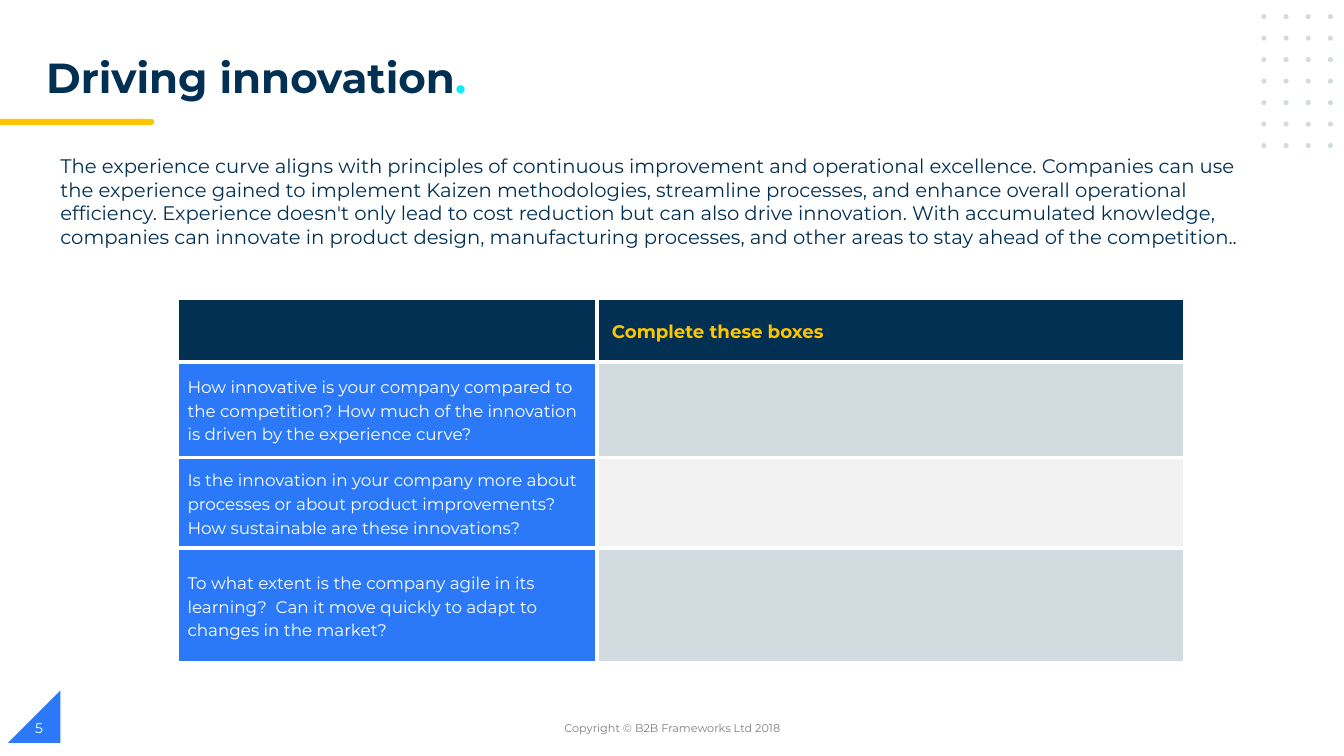
from lxml import etree
from pptx import Presentation
from pptx.dml.color import RGBColor as RGB
from pptx.enum.shapes import MSO_SHAPE as SHAPE
from pptx.enum.text import MSO_ANCHOR as ANCHOR, PP_ALIGN as ALIGN
from pptx.oxml.ns import qn
from pptx.util import Inches, Pt

FONT = "Montserrat"
COLORS = {
    "navy": "023053", "blue": "2B79F8", "gold": "FFC600", "cyan": "0EECEC",
    "mist": "D1DBE0", "pale": "F2F2F2", "gray": "7F7F7F", "white": "FFFFFF",
}
INTRO = (
    "The experience curve aligns with principles of continuous improvement "
    "and operational excellence. Companies can use the experience gained to "
    "implement Kaizen methodologies, streamline processes, and enhance overall "
    "operational efficiency. Experience doesn't only lead to cost reduction but "
    "can also drive innovation. With accumulated knowledge, companies can "
    "innovate in product design, manufacturing processes, and other areas to "
    "stay ahead of the competition.."
)
# Question, row height, colour of the answer box
ROWS = [
    ("How innovative is your company compared to the competition? How much of "
     "the innovation is driven by the experience curve?", 0.95, "mist"),
    ("Is the innovation in your company more about processes or about product "
     "improvements? How sustainable are these innovations?", 0.9, "pale"),
    ("To what extent is the company agile in its learning?  Can it move quickly "
     "to adapt to changes in the market?", 1.14, "mist"),
]


def color(name):
    return RGB.from_string(COLORS[name])


def add_run(para, text, size, tint, bold=False):
    run = para.add_run()
    run.text = text
    font = run.font
    font.name, font.size, font.bold = FONT, Pt(size), bold
    font.color.rgb = color(tint)


def add_shape(slide, kind, left, top, width, height, tint):
    shape = slide.shapes.add_shape(
        kind, Inches(left), Inches(top), Inches(width), Inches(height))
    shape.shadow.inherit = False
    shape.fill.solid()
    shape.fill.fore_color.rgb = color(tint)
    shape.line.fill.background()
    return shape


def add_text(slide, left, top, width, height, anchor=ANCHOR.TOP):
    box = slide.shapes.add_textbox(
        Inches(left), Inches(top), Inches(width), Inches(height))
    frame = box.text_frame
    frame.word_wrap = True
    frame.vertical_anchor = anchor
    return frame.paragraphs[0]


def add_dots(slide):
    for row in range(7):
        for col in range(4):
            add_shape(slide, SHAPE.OVAL, 12.51 + 0.22 * col,
                      0.14 + 0.2133 * row, 0.05, 0.05, "mist")


def set_edges(cell, tint, width):
    props = cell._tc.get_or_add_tcPr()
    for side in ("lnL", "lnR", "lnT", "lnB"):
        line = etree.SubElement(props, qn(f"a:{side}"), w=str(Pt(width)))
        fill = etree.SubElement(line, qn("a:solidFill"))
        etree.SubElement(fill, qn("a:srgbClr"), val=COLORS[tint])


def fill_cell(cell, back, text="", size=12, tint="white", bold=False, left=0.1):
    set_edges(cell, "white", 3)
    cell.fill.solid()
    cell.fill.fore_color.rgb = color(back)
    cell.vertical_anchor = ANCHOR.MIDDLE
    cell.margin_left, cell.margin_right = Inches(left), Inches(0.1)
    cell.margin_top = cell.margin_bottom = 0
    if text:
        para = cell.text_frame.paragraphs[0]
        para.line_spacing = 1.15
        add_run(para, text, size, tint, bold)


def add_grid(slide):
    widths = [4.16, 5.83]
    heights = [0.63] + [height for _, height, _ in ROWS]
    table = slide.shapes.add_table(
        len(heights), len(widths), Inches(1.76), Inches(2.96),
        Inches(sum(widths)), Inches(sum(heights))).table
    for col, width in zip(table.columns, widths):
        col.width = Inches(width)
    for row, height in zip(table.rows, heights):
        row.height = Inches(height)
    fill_cell(table.cell(0, 0), "navy")
    fill_cell(table.cell(0, 1), "navy", "Complete these boxes", 13, "gold",
              True, 0.15)
    for num, (text, _, back) in enumerate(ROWS, 1):
        fill_cell(table.cell(num, 0), "blue", text)
        fill_cell(table.cell(num, 1), back)


def main():
    deck = Presentation()
    deck.slide_width, deck.slide_height = Inches(13.33), Inches(7.5)
    slide = deck.slides.add_slide(deck.slide_layouts[6])

    # Corner, title bar and dots
    corner = add_shape(slide, SHAPE.RIGHT_TRIANGLE, 0.08, 6.85, 0.52, 0.52, "blue")
    corner._element.spPr.xfrm.set("flipH", "1")
    add_shape(slide, SHAPE.FLOWCHART_TERMINATOR, 1.34, 1.18, 0.19, 0.06, "gold")
    add_shape(slide, SHAPE.RECTANGLE, 0, 1.18, 1.41, 0.06, "gold")
    add_dots(slide)

    # Footer
    para = add_text(slide, 4.42, 7.02, 4.5, 0.4, ANCHOR.MIDDLE)
    para.alignment = ALIGN.CENTER
    add_run(para, "Copyright © B2B Frameworks Ltd 2018", 8, "gray")
    para = add_text(slide, 0.25, 7.02, 3, 0.4, ANCHOR.MIDDLE)
    add_run(para, "5", 10, "white")

    # Title and intro
    para = add_text(slide, 0.36, 0.52, 9.9, 0.6)
    para.line_spacing = 0.9
    add_run(para, "Driving innovation", 30, "navy", True)
    add_run(para, ".", 30, "cyan", True)
    para = add_text(slide, 0.5, 1.48, 11.92, 1.04)
    add_run(para, INTRO, 14, "navy")

    # Questions
    add_grid(slide)
    deck.save("out.pptx")


if __name__ == "__main__":
    main()
